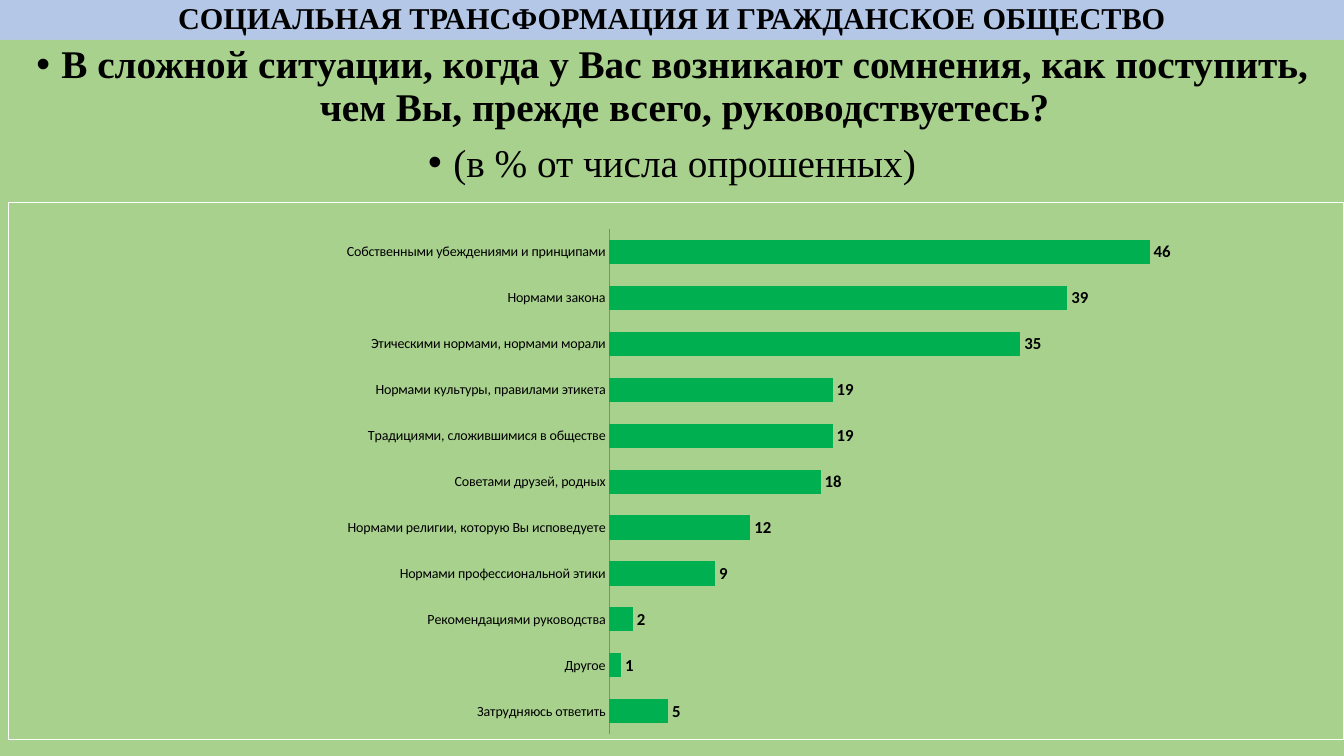
"""Build a survey slide with a title, a question and a bar chart of answers."""
from dataclasses import dataclass

from lxml.etree import SubElement
from pptx import Presentation
from pptx.chart.chart import Chart
from pptx.chart.data import CategoryChartData
from pptx.dml.color import RGBColor
from pptx.enum.chart import XL_CHART_TYPE as ChartType
from pptx.enum.chart import XL_LABEL_POSITION as LabelPosition
from pptx.enum.chart import XL_TICK_MARK as TickMark
from pptx.enum.text import MSO_ANCHOR as Anchor
from pptx.enum.text import MSO_AUTO_SIZE as AutoSize
from pptx.enum.text import PP_ALIGN as Align
from pptx.oxml import parse_xml
from pptx.oxml.ns import nsdecls, qn
from pptx.shapes.base import BaseShape
from pptx.slide import Slide
from pptx.util import Emu, Pt

EMU_PER_PX = 9525
BLACK = RGBColor(0x00, 0x00, 0x00)
BLUE = RGBColor(0xB4, 0xC7, 0xE7)
LIGHT_GREEN = RGBColor(0xA9, 0xD1, 0x8E)
BAR_GREEN = RGBColor(0x00, 0xB0, 0x50)
AXIS_GRAY = RGBColor(0x86, 0x86, 0x86)
HEADING_FONT = "Times New Roman"
CHART_FONT = "Calibri"


def px(length: int) -> Emu:
    return Emu(length * EMU_PER_PX)


@dataclass(frozen=True)
class Box:
    left: int
    top: int
    width: int
    height: int

    def emu(self) -> tuple[Emu, Emu, Emu, Emu]:
        return px(self.left), px(self.top), px(self.width), px(self.height)


@dataclass(frozen=True)
class Line:
    text: str
    bold: bool


@dataclass(frozen=True)
class Answer:
    label: str
    percent: int


TITLE_BOX = Box(0, 0, 1280, 38)
QUESTION_BOX = Box(0, 38, 1280, 682)
CHART_BOX = Box(8, 192, 1272, 513)
PLOT_LAYOUT = {"x": 0.45, "y": 0.05, "w": 0.44, "h": 0.94}

TITLE = "СОЦИАЛЬНАЯ ТРАНСФОРМАЦИЯ И ГРАЖДАНСКОЕ ОБЩЕСТВО"
QUESTION = [
    Line("В сложной ситуации, когда у Вас возникают сомнения, как поступить, "
         "чем Вы, прежде всего, руководствуетесь?", True),
    Line("(в % от числа опрошенных)", False),
]
ANSWERS = [
    Answer("Затрудняюсь ответить", 5),
    Answer("Другое", 1),
    Answer("Рекомендациями руководства", 2),
    Answer("Нормами профессиональной этики", 9),
    Answer("Нормами религии, которую Вы исповедуете", 12),
    Answer("Советами друзей, родных", 18),
    Answer("Традициями, сложившимися в обществе", 19),
    Answer("Нормами культуры, правилами этикета", 19),
    Answer("Этическими нормами, нормами морали", 35),
    Answer("Нормами закона", 39),
    Answer("Собственными убеждениями и принципами", 46),
]


def write_lines(shape: BaseShape, lines: list[Line], *, size: float, fill: RGBColor,
                anchor: Anchor, space_before: int = 0, bullet_indent: int = 0) -> None:
    shape.fill.solid()
    shape.fill.fore_color.rgb = fill
    frame = shape.text_frame
    frame.word_wrap = True
    frame.auto_size = AutoSize.NONE
    frame.vertical_anchor = anchor
    for index, line in enumerate(lines):
        paragraph = frame.add_paragraph() if index else frame.paragraphs[0]
        paragraph.alignment = Align.CENTER
        paragraph.line_spacing = 0.9
        paragraph.space_before = Pt(space_before)
        if bullet_indent:
            properties = paragraph._p.get_or_add_pPr()
            properties.set("marL", str(px(bullet_indent)))
            properties.set("indent", str(-px(bullet_indent)))
            SubElement(properties, qn("a:buFont"), typeface="Arial")
            SubElement(properties, qn("a:buChar"), char="•")
        run = paragraph.add_run()
        run.text = line.text
        run.font.name = HEADING_FONT
        run.font.size = Pt(size)
        run.font.bold = line.bold
        run.font.color.rgb = BLACK


def set_plot_layout(chart: Chart) -> None:
    plot_area = chart._chartSpace.chart.plotArea
    for layout in plot_area.findall(qn("c:layout")):
        plot_area.remove(layout)
    modes = '<c:layoutTarget val="inner"/><c:xMode val="edge"/><c:yMode val="edge"/>'
    sizes = "".join(f'<c:{key} val="{value}"/>' for key, value in PLOT_LAYOUT.items())
    plot_area.insert(0, parse_xml(
        f'<c:layout {nsdecls("c")}><c:manualLayout>{modes}{sizes}'
        '</c:manualLayout></c:layout>'))


def set_chart_border(chart: Chart) -> None:
    border = parse_xml(
        f'<c:spPr {nsdecls("c", "a")}><a:noFill/><a:ln w="{Pt(0.75)}"><a:solidFill>'
        '<a:srgbClr val="FFFFFF"/></a:solidFill></a:ln></c:spPr>')
    chart._chartSpace.find(qn("c:txPr")).addprevious(border)


def add_answer_chart(slide: Slide, box: Box, answers: list[Answer]) -> None:
    data = CategoryChartData()
    data.categories = [answer.label for answer in answers]
    data.add_series("Series 1", [answer.percent for answer in answers])
    chart = slide.shapes.add_chart(ChartType.BAR_CLUSTERED, *box.emu(), data).chart
    chart.has_title = False
    chart.has_legend = False
    chart.font.name = CHART_FONT
    chart.font.size = Pt(10)
    chart.font.color.rgb = BLACK

    chart.value_axis.visible = False
    chart.value_axis.has_major_gridlines = False
    chart.value_axis.minimum_scale = 0
    chart.value_axis.maximum_scale = 50
    category_axis = chart.category_axis
    category_axis.major_tick_mark = TickMark.NONE
    category_axis.format.line.color.rgb = AXIS_GRAY
    category_axis.format.line.width = Pt(0.75)

    plot = chart.plots[0]
    plot.gap_width = 90
    plot.vary_by_categories = False
    series = plot.series[0]
    series.format.fill.solid()
    series.format.fill.fore_color.rgb = BAR_GREEN
    labels = series.data_labels
    labels.show_value = True
    labels.position = LabelPosition.OUTSIDE_END
    labels.font.name = CHART_FONT
    labels.font.size = Pt(12)
    labels.font.bold = True
    labels.font.color.rgb = BLACK
    set_plot_layout(chart)
    set_chart_border(chart)


def main() -> None:
    presentation = Presentation()
    presentation.slide_width = px(1280)
    presentation.slide_height = px(720)
    slide = presentation.slides.add_slide(presentation.slide_layouts[5])

    title = slide.shapes.title
    title.left, title.top, title.width, title.height = TITLE_BOX.emu()
    write_lines(title, [Line(TITLE, True)], size=21.6, fill=BLUE, anchor=Anchor.MIDDLE)
    question = slide.shapes.add_textbox(*QUESTION_BOX.emu())
    write_lines(question, QUESTION, size=28, fill=LIGHT_GREEN, anchor=Anchor.TOP,
                space_before=10, bullet_indent=24)
    add_answer_chart(slide, CHART_BOX, ANSWERS)
    presentation.save("out.pptx")


if __name__ == "__main__":
    main()
